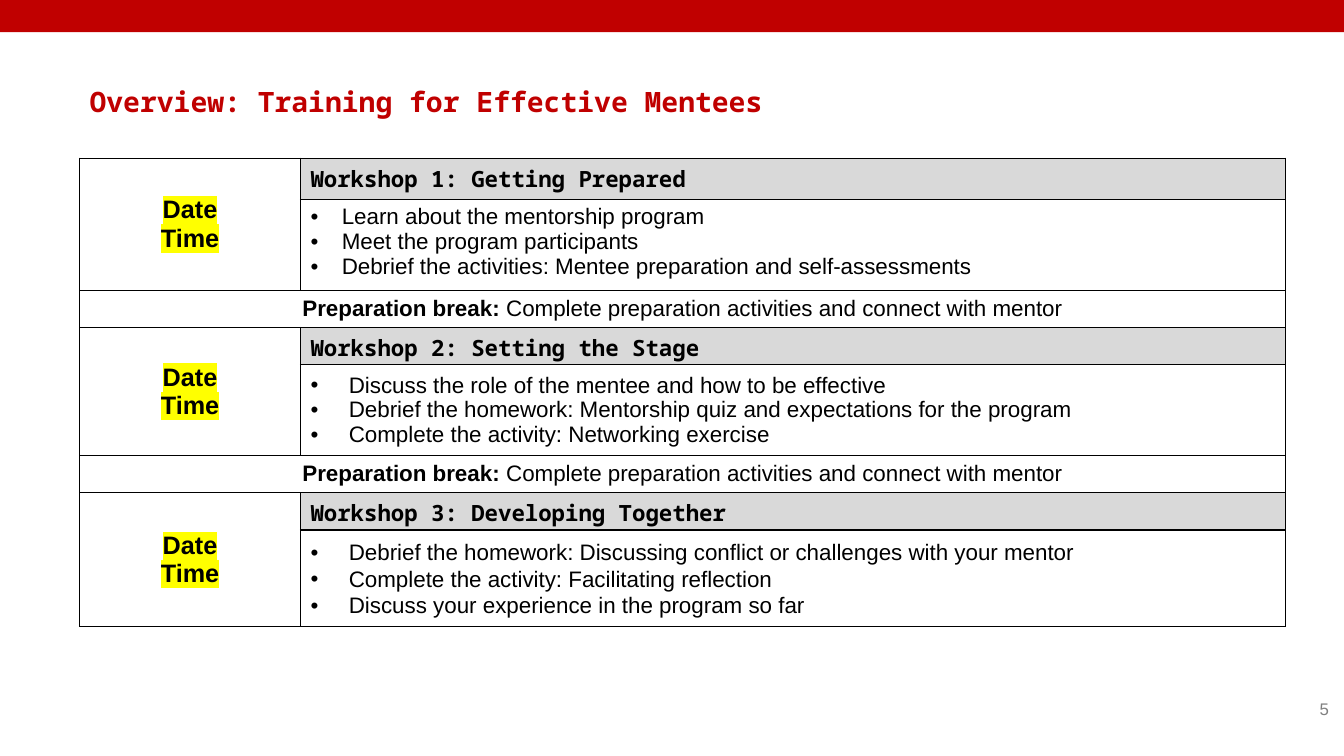
"""Build the workshop overview slide for mentee training."""
from lxml.etree import SubElement
from pptx import Presentation
from pptx.dml.color import RGBColor
from pptx.enum.shapes import MSO_SHAPE
from pptx.enum.text import MSO_ANCHOR, MSO_AUTO_SIZE, PP_ALIGN
from pptx.oxml import parse_xml
from pptx.oxml.ns import nsdecls, qn
from pptx.util import Inches, Pt

TITLE = "Overview: Training for Effective Mentees"
PAGE = "5"
DATE = ["Date", "Time"]
BREAK = ("Preparation break: ", "Complete preparation activities and connect with mentor")
WORKSHOPS = [
    {"name": "Workshop 1: Getting Prepared", "heights": (0.41, 0.9), "indent": 0.31,
     "anchor": MSO_ANCHOR.TOP, "spacing": None,
     "points": ["Learn about the mentorship program",
                "Meet the program participants",
                "Debrief the activities: Mentee preparation and self-assessments"]},
    {"name": "Workshop 2: Setting the Stage", "heights": (0.37, 0.9), "indent": 0.38,
     "anchor": MSO_ANCHOR.MIDDLE, "spacing": None,
     "points": ["Discuss the role of the mentee and how to be effective",
                "Debrief the homework: Mentorship quiz and expectations for the program",
                "Complete the activity: Networking exercise"]},
    {"name": "Workshop 3: Developing Together", "heights": (0.37, 0.96), "indent": 0.38,
     "anchor": MSO_ANCHOR.MIDDLE, "spacing": 1.07,
     "points": ["Debrief the homework: Discussing conflict or challenges with your mentor",
                "Complete the activity: Facilitating reflection",
                "Discuss your experience in the program so far"]},
]
BREAK_HEIGHT = 0.37
COLUMNS = (2.19, 9.77)
RED, GREY, BLACK, YELLOW, PAGE_GREY = "C00000", "D9D9D9", "000000", "FFFF00", "808080"
BODY = {"name": "Arial", "size": Pt(16), "bold": False}
STRONG = {**BODY, "bold": True}
DATE_FONT = {**STRONG, "size": Pt(18)}
HEADING = {**STRONG, "name": "Noto Sans Mono"}
TITLE_FONT = {**HEADING, "size": Pt(20)}
PAGE_FONT = {**BODY, "size": Pt(12)}


def rgb(value):
    return RGBColor.from_string(value)


def add_run(p, text, font, color=BLACK, highlight=None):
    r = p.add_run()
    r.text = text
    for key, value in font.items():
        setattr(r.font, key, value)
    r.font.color.rgb = rgb(color)
    if highlight:
        mark = parse_xml(f'<a:highlight {nsdecls("a")}><a:srgbClr val="{highlight}"/></a:highlight>')
        r.font.fill
        r._r.get_or_add_rPr().find(qn("a:solidFill")).addnext(mark)


def write(tf, lines, font, align=PP_ALIGN.LEFT, indent=0, spacing=None, **style):
    for i, line in enumerate(lines):
        p = tf.add_paragraph() if i else tf.paragraphs[0]
        p.alignment = align
        if spacing:
            p.line_spacing = spacing
        if indent:
            pPr = p._p.get_or_add_pPr()
            pPr.set("marL", str(Inches(indent)))
            pPr.set("indent", str(-Inches(indent)))
            SubElement(pPr, qn("a:buFont")).set("typeface", "Arial")
            SubElement(pPr, qn("a:buChar")).set("char", "•")
        add_run(p, line, font, **style)


def add_text(s, box, text, font, **style):
    tf = s.shapes.add_textbox(*map(Inches, box)).text_frame
    tf.word_wrap = True
    write(tf, [text], font, **style)
    return tf


def add_borders(cell):
    tcPr = cell._tc.get_or_add_tcPr()
    for i, side in enumerate("LRTB"):
        tcPr.insert(i, parse_xml(
            f'<a:ln{side} {nsdecls("a")} w="{Pt(1)}"><a:solidFill>'
            f'<a:srgbClr val="{BLACK}"/></a:solidFill></a:ln{side}>'))


def add_schedule(s):
    heights = []
    for workshop in WORKSHOPS:
        heights += [*workshop["heights"], BREAK_HEIGHT]
    heights.pop()
    table = s.shapes.add_table(len(heights), 2, Inches(0.79), Inches(1.57),
                               Inches(sum(COLUMNS)), Inches(sum(heights))).table
    table.first_row = table.horz_banding = False
    for column, width in zip(table.columns, COLUMNS):
        column.width = Inches(width)
    for row, height in zip(table.rows, heights):
        row.height = Inches(height)
    for cell in table.iter_cells():
        cell.fill.background()
        cell.vertical_anchor = MSO_ANCHOR.MIDDLE
        add_borders(cell)
    for i, workshop in enumerate(WORKSHOPS):
        top = 3 * i
        if i:
            pause = table.cell(top - 1, 0)
            pause.merge(table.cell(top - 1, 1))
            write(pause.text_frame, BREAK[:1], STRONG, PP_ALIGN.CENTER)
            add_run(pause.text_frame.paragraphs[0], BREAK[1], BODY)
        date, heading, points = table.cell(top, 0), table.cell(top, 1), table.cell(top + 1, 1)
        date.merge(table.cell(top + 1, 0))
        write(date.text_frame, DATE, DATE_FONT, PP_ALIGN.CENTER, highlight=YELLOW)
        heading.fill.solid()
        heading.fill.fore_color.rgb = rgb(GREY)
        write(heading.text_frame, [workshop["name"]], HEADING)
        points.vertical_anchor = workshop["anchor"]
        write(points.text_frame, workshop["points"], BODY,
              indent=workshop["indent"], spacing=workshop["spacing"])


def main():
    prs = Presentation()
    prs.slide_width, prs.slide_height = Inches(13.33), Inches(7.5)
    s = prs.slides.add_slide(prs.slide_layouts[6])
    band = s.shapes.add_shape(MSO_SHAPE.RECTANGLE, 0, 0, prs.slide_width, Inches(0.32))
    band.shadow.inherit = False
    band.fill.solid()
    band.fill.fore_color.rgb = rgb(RED)
    band.line.fill.background()
    tf = add_text(s, (0.79, 0.79, 10.75, 0.44), TITLE, TITLE_FONT, color=RED)
    tf.auto_size = MSO_AUTO_SIZE.SHAPE_TO_FIT_TEXT
    add_schedule(s)
    tf = add_text(s, (10.28, 6.83, 3, 0.4), PAGE, PAGE_FONT, align=PP_ALIGN.RIGHT, color=PAGE_GREY)
    tf.vertical_anchor = MSO_ANCHOR.MIDDLE
    prs.save("out.pptx")


if __name__ == "__main__":
    main()
